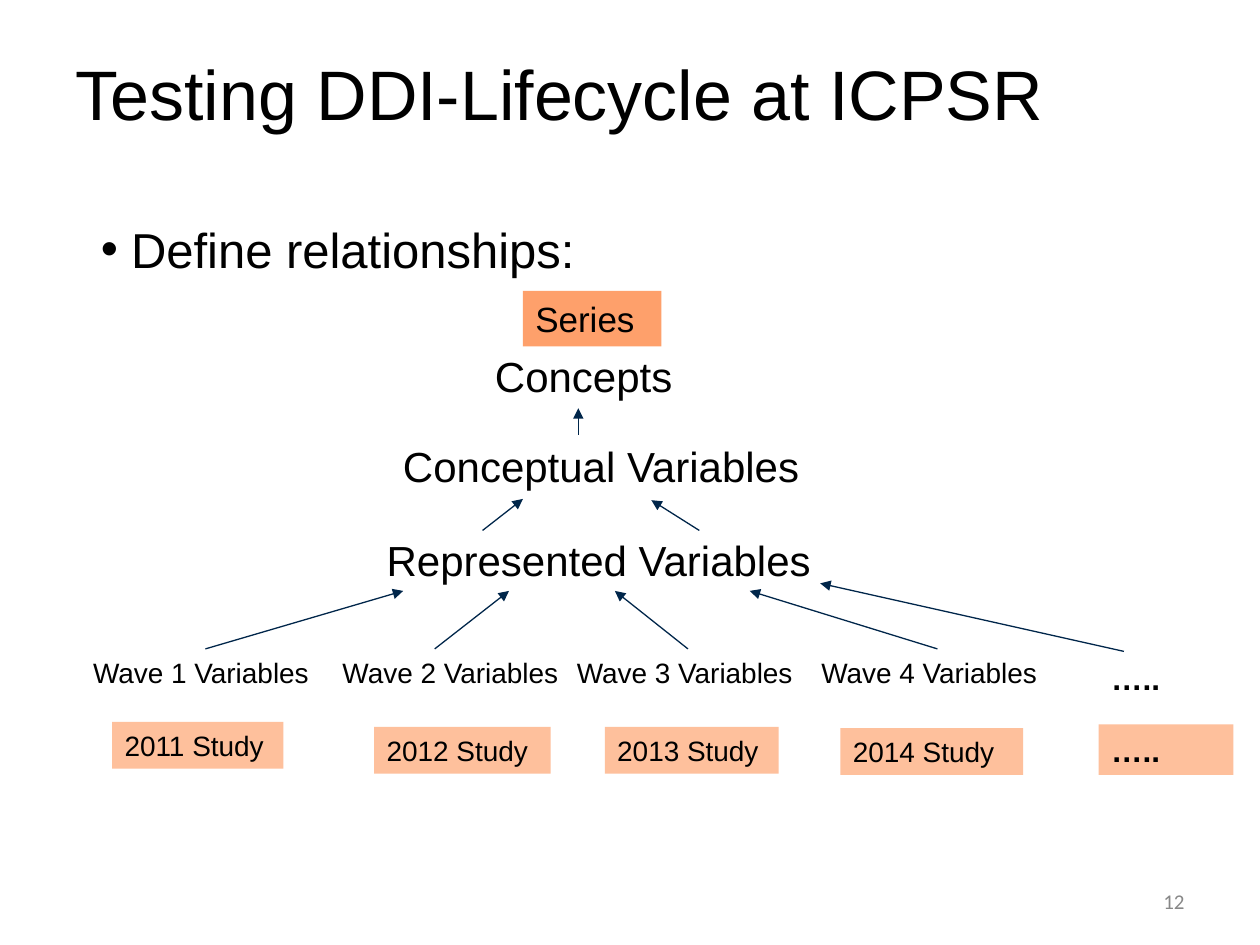
from typing import NamedTuple, Optional

from lxml.etree import SubElement
from pptx import Presentation
from pptx.dml.color import RGBColor
from pptx.enum.shapes import MSO_CONNECTOR, MSO_SHAPE
from pptx.enum.text import MSO_ANCHOR, MSO_AUTO_SIZE, PP_ALIGN
from pptx.oxml.ns import qn
from pptx.util import Inches, Pt

BLACK, NAVY, GRAY = "000000", "00264A", "888888"
ORANGE, PEACH = "FEA06B", "FEC09C"


class Label(NamedTuple):
    text: str
    left: float
    top: float
    width: float
    height: float
    size: int
    fill: Optional[str] = None
    bold: bool = False
    wrap: bool = True


class Arrow(NamedTuple):
    start: tuple
    end: tuple
    source: Optional[str] = None  # label whose top middle the arrow leaves


LEVELS = [
    Label("Series", 4.15, 2.31, 1.1, 0.44, 20, ORANGE),
    Label("Concepts", 3.83, 2.73, 1.83, 0.5, 24),
    Label("Conceptual Variables", 3.1, 3.45, 3.43, 0.5, 24),
    Label("Represented Variables", 2.97, 4.19, 4.07, 0.5, 24),
]
WAVES = [
    Label(f"Wave {number} Variables", left, 5.15, width, 0.37, 16, wrap=number < 4)
    for number, (left, width) in enumerate(
        [(0.64, 1.98), (2.62, 1.97), (4.48, 1.96), (6.42, 2.04)], 1)
]
STUDIES = [
    Label(f"{year} Study", left, top, width, 0.37, 16, PEACH)
    for year, (left, top, width) in enumerate(
        [(0.89, 5.73, 1.36), (2.97, 5.77, 1.4), (4.8, 5.77, 1.38), (6.67, 5.78, 1.45)], 2011)
]
MORE = [
    Label("…..", 8.72, top, 1.07, 0.4, 18, fill, bold=True)
    for top, fill in [(5.18, None), (5.75, PEACH)]
]
ARROWS = [
    Arrow((1.63, 5.15), (3.2, 4.69), "Wave 1 Variables"),
    Arrow((3.45, 5.15), (4.04, 4.69)),
    Arrow((5.46, 5.15), (4.88, 4.69), "Wave 3 Variables"),
    Arrow((7.44, 5.15), (5.95, 4.69), "Wave 4 Variables"),
    Arrow((8.92, 5.17), (6.51, 4.63)),
    Arrow((3.83, 4.21), (4.15, 3.96)),
    Arrow((5.55, 4.21), (5.17, 3.97)),
    Arrow((4.59, 3.45), (4.59, 3.24)),
]


def color(value: str) -> RGBColor:
    return RGBColor.from_string(value)


def place(shape, left: float, top: float, width: float, height: float) -> None:
    shape.left, shape.top = Inches(left), Inches(top)
    shape.width, shape.height = Inches(width), Inches(height)


def format_text(para, size: int, shade: str = BLACK, font: str = "Arial",
                bold: bool = False) -> None:
    for span in para.runs:
        span.font.name, span.font.size, span.font.bold = font, Pt(size), bold
        span.font.color.rgb = color(shade)


def draw_label(page, label: Label):
    bounds = [Inches(value) for value in label[1:5]]
    if label.fill:
        box = page.shapes.add_shape(MSO_SHAPE.RECTANGLE, *bounds)
        box.shadow.inherit = False
        box.fill.solid()
        box.fill.fore_color.rgb = color(label.fill)
        box.line.fill.background()
    else:
        box = page.shapes.add_textbox(*bounds)
    frame = box.text_frame
    frame.text = label.text
    frame.word_wrap = label.wrap
    frame.auto_size = MSO_AUTO_SIZE.SHAPE_TO_FIT_TEXT
    frame.vertical_anchor = MSO_ANCHOR.TOP
    frame.paragraphs[0].alignment = PP_ALIGN.LEFT
    format_text(frame.paragraphs[0], label.size, bold=label.bold)
    return box


def draw_arrow(page, arrow: Arrow, boxes: dict) -> None:
    points = [Inches(value) for value in arrow.start + arrow.end]
    line = page.shapes.add_connector(MSO_CONNECTOR.STRAIGHT, *points)
    if arrow.source:
        line.begin_connect(boxes[arrow.source], 0)
    line.line.color.rgb = color(NAVY)
    line.line.width = Pt(0.75)
    properties = line._element.spPr
    SubElement(properties.find(qn("a:ln")), qn("a:tailEnd"), type="triangle")
    SubElement(properties, qn("a:effectLst"))


def draw_title(page) -> None:
    title = page.shapes.title
    place(title, 0.5, -0.13, 9, 1.3)
    frame = title.text_frame
    frame.text = "Testing DDI-Lifecycle at ICPSR"
    frame.auto_size = MSO_AUTO_SIZE.NONE
    frame.vertical_anchor = MSO_ANCHOR.BOTTOM
    frame.margin_top = frame.margin_bottom = Inches(0.1)
    frame.paragraphs[0].alignment = PP_ALIGN.LEFT
    format_text(frame.paragraphs[0], 40)


def draw_body(page) -> None:
    body = page.placeholders[1]
    place(body, 0.5, 1.59, 9, 5.37)
    frame = body.text_frame
    frame.text = "Define relationships:"
    frame.auto_size = MSO_AUTO_SIZE.NONE
    frame.margin_top, frame.margin_bottom = Inches(0.15), Inches(0.1)
    para = frame.paragraphs[0]
    para.space_before = Pt(0)
    # Hanging bullet
    properties = para._p.get_or_add_pPr()
    properties.set("marL", str(Inches(0.44)))
    properties.set("indent", str(Inches(-0.24)))
    SubElement(properties, qn("a:buChar"), char="•")
    format_text(para, 28)


def draw_page_number(page) -> None:
    box = page.shapes.add_textbox(Inches(7.17), Inches(6.95), Inches(2.33), Inches(0.4))
    frame = box.text_frame
    frame.text = "12"
    frame.word_wrap = True
    frame.vertical_anchor = MSO_ANCHOR.MIDDLE
    frame.paragraphs[0].alignment = PP_ALIGN.RIGHT
    format_text(frame.paragraphs[0], 12, GRAY, "Calibri")


def main() -> None:
    deck = Presentation()
    deck.slide_width, deck.slide_height = Inches(10), Inches(7.5)
    page = deck.slides.add_slide(deck.slide_layouts[1])
    draw_title(page)
    draw_body(page)
    draw_page_number(page)
    # Hierarchy of variables and the studies below it
    boxes = {label.text: draw_label(page, label)
             for label in LEVELS + WAVES + STUDIES + MORE}
    for arrow in ARROWS:
        draw_arrow(page, arrow, boxes)
    deck.save("out.pptx")


if __name__ == "__main__":
    main()
